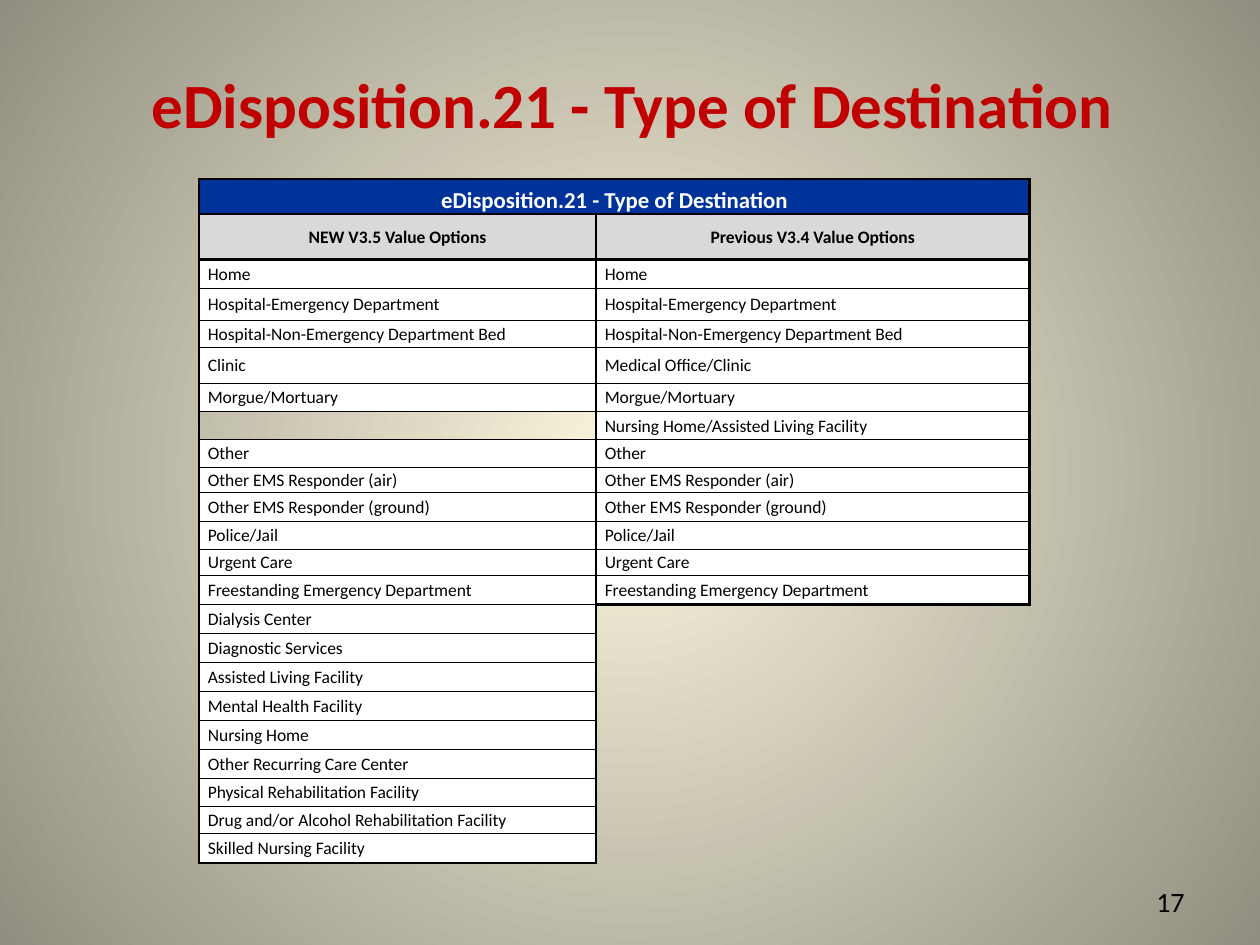
from typing import NamedTuple, Optional

from lxml.etree import SubElement
from pptx import Presentation
from pptx.dml.color import RGBColor
from pptx.enum.text import MSO_ANCHOR as Anchor, PP_ALIGN as Align
from pptx.oxml import parse_xml
from pptx.oxml.ns import nsdecls, qn
from pptx.util import Inches, Pt

WIDTH, HEIGHT = 10, 7.5
FONT = "Calibri"
COLORS = {
    "center": "FCF7DD", "edge": "918E81", "title": "C00000", "banner": "003399",
    "heading": "D9D9D9", "white": "FFFFFF", "black": "000000",
}
NO_TABLE_STYLE = "{2D5ABB26-0587-4C30-8999-92F81FD0307C}"
THICK, THIN = 1.5, 0.5
TITLE = "eDisposition.21 - Type of Destination"
COLUMN_WIDTHS = (3.15, 3.44)


class Box(NamedTuple):
    """Position and size in percent of the slide."""
    left: float
    top: float
    width: float
    height: float

    def lengths(self) -> list:
        sides = (WIDTH, HEIGHT, WIDTH, HEIGHT)
        return [Inches(share * side / 100) for share, side in zip(self, sides)]


class TextStyle(NamedTuple):
    size: float
    color: str = "black"
    bold: bool = False
    align: Align = Align.LEFT


class Borders(NamedTuple):
    """Line widths in points; zero leaves a side open."""
    L: float = THICK
    R: float = THICK
    T: float = THIN
    B: float = THIN


class Destination(NamedTuple):
    height: float
    new: Optional[str]
    previous: Optional[str]


TITLE_BOX = Box(5.2, 6.8, 90, 8.27)
NUMBER_BOX = Box(71.7, 92.93, 23.3, 4.93)
TABLE_BOX = Box(15.8, 18.93, 65.9, 72.27)

TITLE_STYLE = TextStyle(36, "title", True, Align.CENTER)
NUMBER_STYLE = TextStyle(16, align=Align.RIGHT)
BANNER_STYLE = TextStyle(13, "white", True, Align.CENTER)
HEADING_STYLE = TextStyle(10, bold=True, align=Align.CENTER)
BODY_STYLE = TextStyle(10)

BANNER_HEIGHT, HEADING_HEIGHT = 0.28, 0.36
HEADINGS = ("NEW V3.5 Value Options", "Previous V3.4 Value Options")
DESTINATIONS = [
    Destination(0.23, "Home", "Home"),
    Destination(0.25, "Hospital-Emergency Department", "Hospital-Emergency Department"),
    Destination(0.22, "Hospital-Non-Emergency Department Bed",
                "Hospital-Non-Emergency Department Bed"),
    Destination(0.28, "Clinic", "Medical Office/Clinic"),
    Destination(0.23, "Morgue/Mortuary", "Morgue/Mortuary"),
    Destination(0.22, None, "Nursing Home/Assisted Living Facility"),
    Destination(0.22, "Other", "Other"),
    Destination(0.2, "Other EMS Responder (air)", "Other EMS Responder (air)"),
    Destination(0.23, "Other EMS Responder (ground)", "Other EMS Responder (ground)"),
    Destination(0.22, "Police/Jail", "Police/Jail"),
    Destination(0.21, "Urgent Care", "Urgent Care"),
    Destination(0.23, "Freestanding Emergency Department",
                "Freestanding Emergency Department"),
    Destination(0.23, "Dialysis Center", None),
    Destination(0.23, "Diagnostic Services", None),
    Destination(0.23, "Assisted Living Facility", None),
    Destination(0.23, "Mental Health Facility", None),
    Destination(0.23, "Nursing Home", None),
    Destination(0.23, "Other Recurring Care Center", None),
    Destination(0.22, "Physical Rehabilitation Facility", None),
    Destination(0.22, "Drug and/or Alcohol Rehabilitation Facility", None),
    Destination(0.23, "Skilled Nursing Facility", None),
]


def set_attributes(target, values: dict) -> None:
    for name, value in values.items():
        setattr(target, name, value)


def write_text(frame, text: str, style: TextStyle) -> None:
    paragraph = frame.paragraphs[0]
    paragraph.alignment = style.align
    run = paragraph.add_run()
    run.text = text
    set_attributes(run.font, {"name": FONT, "size": Pt(style.size), "bold": style.bold})
    run.font.color.rgb = RGBColor.from_string(COLORS[style.color])


def add_label(slide, box: Box, text: str, style: TextStyle) -> None:
    frame = slide.shapes.add_textbox(*box.lengths()).text_frame
    set_attributes(frame, {"word_wrap": True, "vertical_anchor": Anchor.MIDDLE})
    write_text(frame, text, style)


def paint_background(slide) -> None:
    """Fill the background with a gradient that spreads from the center."""
    fill = slide.background.fill
    fill.gradient()
    for stop, position, name in zip(fill.gradient_stops, (0, 1), ("center", "edge")):
        stop.position = position
        stop.color.rgb = RGBColor.from_string(COLORS[name])
    gradient = next(slide.element.iter(qn("a:gradFill")))
    gradient.remove(gradient.find(qn("a:lin")))
    circle = SubElement(gradient, qn("a:path"), {"path": "circle"})
    SubElement(circle, qn("a:fillToRect"), dict.fromkeys("ltrb", "50000"))


def set_borders(cell, borders: Borders) -> None:
    properties = cell._tc.get_or_add_tcPr()
    for index, (side, width) in enumerate(borders._asdict().items()):
        paint = (f'<a:solidFill><a:srgbClr val="{COLORS["black"]}"/></a:solidFill>'
                 if width else "<a:noFill/>")
        properties.insert(index, parse_xml(
            f'<a:ln{side} {nsdecls("a")} w="{Pt(width)}">{paint}</a:ln{side}>'))


def fill_cell(cell, text: Optional[str], style: TextStyle, fill: str, borders: Borders,
              anchor: Anchor = Anchor.MIDDLE) -> None:
    left = 0.07 if style.align == Align.LEFT else 0.01
    set_attributes(cell, {
        "margin_left": Inches(left), "margin_right": Inches(0.01),
        "margin_top": Inches(0.01), "margin_bottom": 0, "vertical_anchor": anchor,
    })
    if text is None:
        cell.fill.background()
        SubElement(cell.text_frame.paragraphs[0]._p, qn("a:endParaRPr"),
                   {"sz": str(style.size * 100)})
    else:
        cell.fill.solid()
        cell.fill.fore_color.rgb = RGBColor.from_string(COLORS[fill])
        write_text(cell.text_frame, text, style)
    set_borders(cell, borders)


def body_borders(column: int, index: int) -> Borders:
    """Close each column with thick lines and leave the cells after its end open."""
    values = [destination[column + 1] for destination in DESTINATIONS]
    last = max(row for row, value in enumerate(values) if value)
    if index > last:
        return Borders(R=0, T=THICK if index == last + 1 else 0, B=0)
    return Borders(T=THICK if index == 0 else THIN, B=THICK if index == last else THIN)


def add_destination_table(slide) -> None:
    heights = [BANNER_HEIGHT, HEADING_HEIGHT, *(row.height for row in DESTINATIONS)]
    frame = slide.shapes.add_table(len(heights), len(COLUMN_WIDTHS), *TABLE_BOX.lengths())
    table = frame.table
    set_attributes(table, {"first_row": False, "horz_banding": False})
    next(table._tbl.iter(qn("a:tableStyleId"))).text = NO_TABLE_STYLE
    for column, width in zip(table.columns, COLUMN_WIDTHS):
        column.width = Inches(width)
    for row, height in zip(table.rows, heights):
        row.height = Inches(height)

    framed = Borders(T=THICK, B=THICK)
    table.cell(0, 0).merge(table.cell(0, 1))
    fill_cell(table.cell(0, 0), TITLE, BANNER_STYLE, "banner", framed, Anchor.BOTTOM)
    set_borders(table.cell(0, 1), framed)
    for column, heading in enumerate(HEADINGS):
        fill_cell(table.cell(1, column), heading, HEADING_STYLE, "heading", framed)
        for index, destination in enumerate(DESTINATIONS):
            fill_cell(table.cell(index + 2, column), destination[column + 1], BODY_STYLE,
                      "white", body_borders(column, index))


def main() -> None:
    presentation = Presentation()
    set_attributes(presentation, {"slide_width": Inches(WIDTH), "slide_height": Inches(HEIGHT)})
    slide = presentation.slides.add_slide(presentation.slide_layouts[6])
    paint_background(slide)
    add_label(slide, NUMBER_BOX, "17", NUMBER_STYLE)
    add_label(slide, TITLE_BOX, TITLE, TITLE_STYLE)
    add_destination_table(slide)
    presentation.save("out.pptx")


if __name__ == "__main__":
    main()
